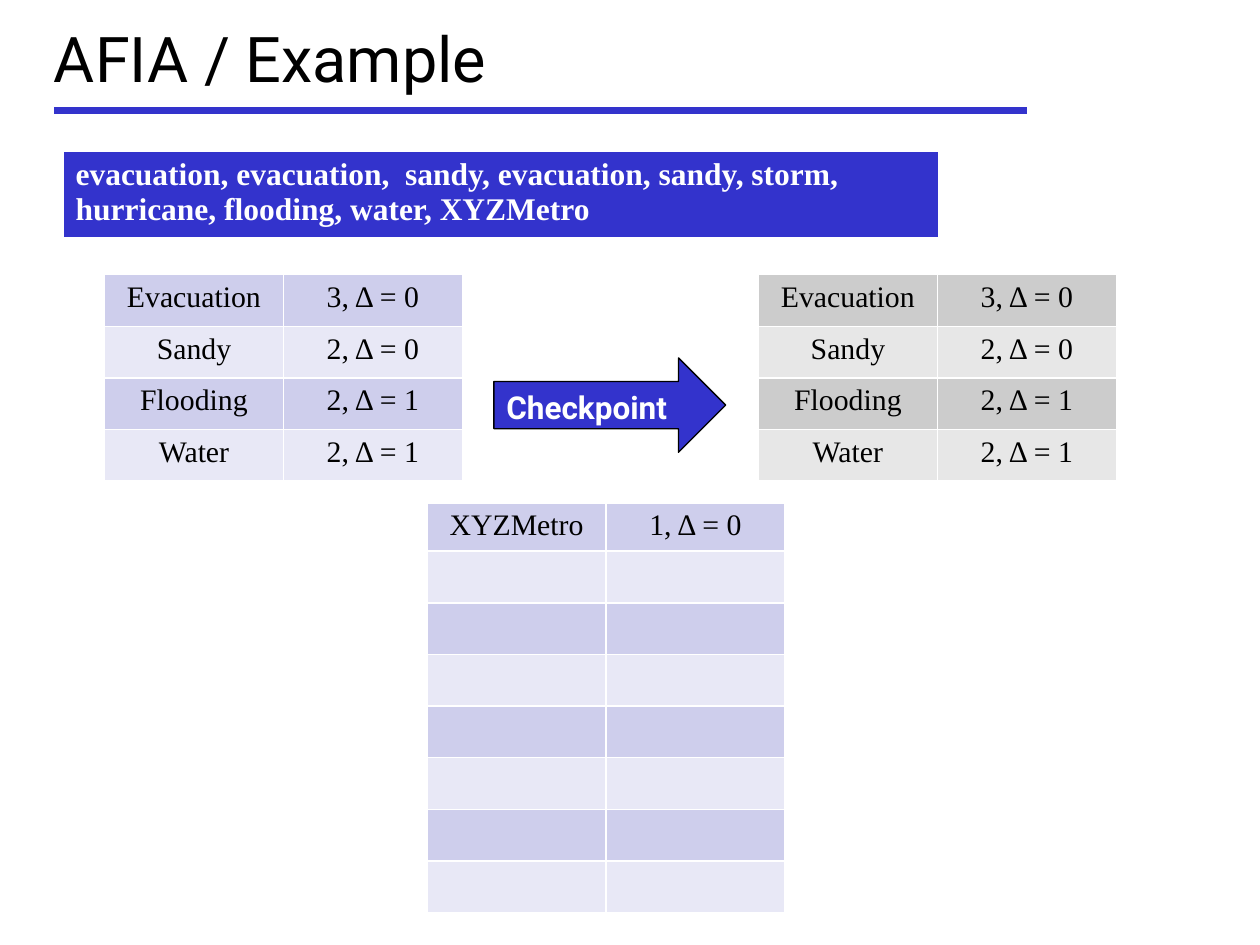
import pptx
import pptx.util
import pptx.dml.color
import pptx.enum.shapes
import pptx.enum.text
import pptx.oxml
import pptx.oxml.ns

Inches = pptx.util.Inches
Pt = pptx.util.Pt
RGBColor = pptx.dml.color.RGBColor

BLACK = RGBColor(0x00, 0x00, 0x00)
WHITE = RGBColor(0xFF, 0xFF, 0xFF)
BLUE = RGBColor(0x33, 0x33, 0xCC)
BLUE_BANDS = (RGBColor(0xCE, 0xCE, 0xEC), RGBColor(0xE8, 0xE8, 0xF6))
GRAY_BANDS = (RGBColor(0xCC, 0xCC, 0xCC), RGBColor(0xE7, 0xE7, 0xE7))

ROW_HEIGHT = 0.41
COLUMN_WIDTH = 1.42
COUNTS = [
    ("Evacuation", "3, Δ = 0"),
    ("Sandy", "2, Δ = 0"),
    ("Flooding", "2, Δ = 1"),
    ("Water", "2, Δ = 1"),
]
NEW_COUNTS = [("XYZMetro", "1, Δ = 0")] + [("", "")] * 7
STREAM = (
    "evacuation, evacuation,  sandy, evacuation, sandy, storm, "
    "hurricane, flooding, water, XYZMetro"
)


class SlideBuilder:
    heading_font = "Roboto"
    body_font = "Times New Roman"

    def __init__(self, page):
        self.page = page

    def add_text(self, frame, text, size, font, color=BLACK, bold=False,
                 align=pptx.enum.text.PP_ALIGN.LEFT):
        para = frame.paragraphs[0]
        para.alignment = align
        if not text:
            para.font.size = Pt(size)
            return
        span = para.add_run()
        span.text = text
        span.font.size = Pt(size)
        span.font.name = font
        span.font.bold = bold
        span.font.color.rgb = color

    def title(self, text, left, top, width, height):
        box = self.page.shapes.add_textbox(
            Inches(left), Inches(top), Inches(width), Inches(height)
        )
        box.text_frame.word_wrap = True
        box.text_frame.vertical_anchor = pptx.enum.text.MSO_ANCHOR.MIDDLE
        self.add_text(box.text_frame, text, 36, self.heading_font)

    def rule(self, left, right, y):
        line = self.page.shapes.add_connector(
            pptx.enum.shapes.MSO_CONNECTOR.STRAIGHT,
            Inches(left), Inches(y), Inches(right), Inches(y),
        )
        line.line.color.rgb = BLUE
        line.line.width = Pt(4)
        properties = line._element.spPr
        properties.append(properties.makeelement(pptx.oxml.ns.qn("a:effectLst"), {}))

    def borders(self, cell, bottom):
        properties = cell._tc.get_or_add_tcPr()
        widths = {"lnL": 1, "lnR": 1, "lnT": 1, "lnB": bottom}
        for position, (side, width) in enumerate(widths.items()):
            border = pptx.oxml.parse_xml(
                f'<a:{side} {pptx.oxml.ns.nsdecls("a")} w="{Pt(width)}">'
                f'<a:solidFill><a:srgbClr val="{WHITE}"/></a:solidFill></a:{side}>'
            )
            properties.insert(position, border)

    def table(self, rows, left, top, column_width, heights, bands,
              size=17, color=BLACK, bold=False,
              align=pptx.enum.text.PP_ALIGN.CENTER, bottom=1):
        columns = len(rows[0])
        grid = self.page.shapes.add_table(
            len(rows), columns, Inches(left), Inches(top),
            Inches(column_width * columns), Inches(sum(heights)),
        ).table
        grid.first_row = False
        grid.horz_banding = False
        for column in grid.columns:
            column.width = Inches(column_width)
        for index, values in enumerate(rows):
            grid.rows[index].height = Inches(heights[index])
            for position, text in enumerate(values):
                cell = grid.cell(index, position)
                cell.fill.solid()
                cell.fill.fore_color.rgb = bands[index % len(bands)]
                self.borders(cell, bottom)
                self.add_text(cell.text_frame, text, size, self.body_font, color, bold, align)

    def arrow(self, text, left, top, width, height):
        shape = self.page.shapes.add_shape(
            pptx.enum.shapes.MSO_SHAPE.RIGHT_ARROW,
            Inches(left), Inches(top), Inches(width), Inches(height),
        )
        shape.shadow.inherit = False
        shape.fill.solid()
        shape.fill.fore_color.rgb = BLUE
        shape.line.color.rgb = BLACK
        shape.line.width = Pt(0.75)
        shape.text_frame.word_wrap = True
        shape.text_frame.vertical_anchor = pptx.enum.text.MSO_ANCHOR.TOP
        self.add_text(shape.text_frame, text, 18, self.heading_font, WHITE, True)


def main():
    deck = pptx.Presentation()
    deck.slide_width = Inches(10)
    deck.slide_height = Inches(7.5)
    builder = SlideBuilder(deck.slides.add_slide(deck.slide_layouts[6]))

    builder.rule(0.43, 8.15, 0.88)
    builder.title("AFIA / Example", 0.33, 0.04, 7.98, 0.83)
    for left, bands in ((0.83, BLUE_BANDS), (6.02, GRAY_BANDS)):
        builder.table(COUNTS, left, 2.18, COLUMN_WIDTH, [ROW_HEIGHT] * len(COUNTS), bands)
    builder.table(NEW_COUNTS, 3.39, 3.99, COLUMN_WIDTH, [0.36] + [ROW_HEIGHT] * 7, BLUE_BANDS)
    builder.table([(STREAM,)], 0.5, 1.2, 6.95, [0.63], [BLUE], size=18, color=WHITE,
                  bold=True, align=pptx.enum.text.PP_ALIGN.LEFT, bottom=3)
    builder.arrow("Checkpoint", 3.92, 2.84, 1.84, 0.75)
    deck.save("out.pptx")


if __name__ == "__main__":
    main()
